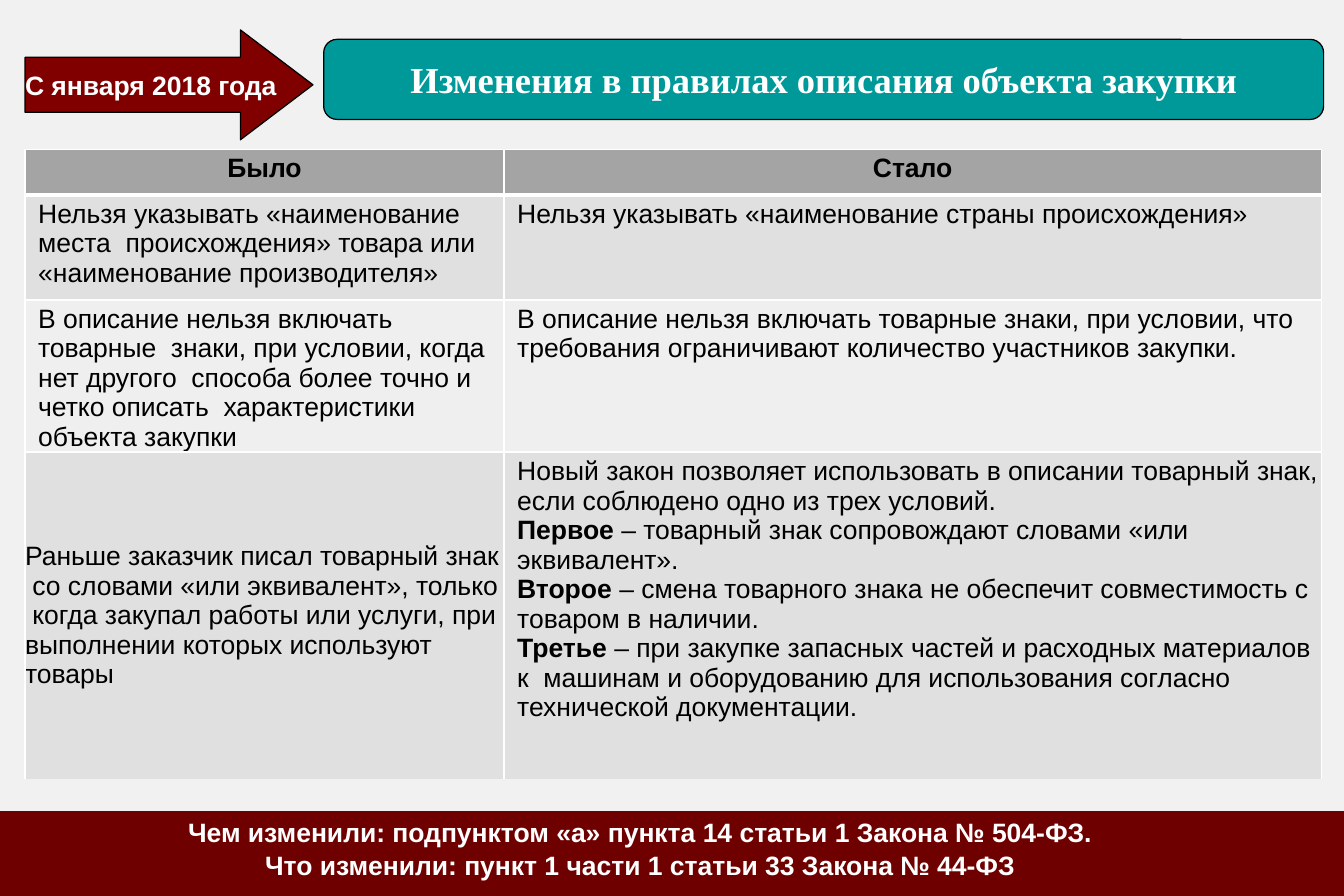
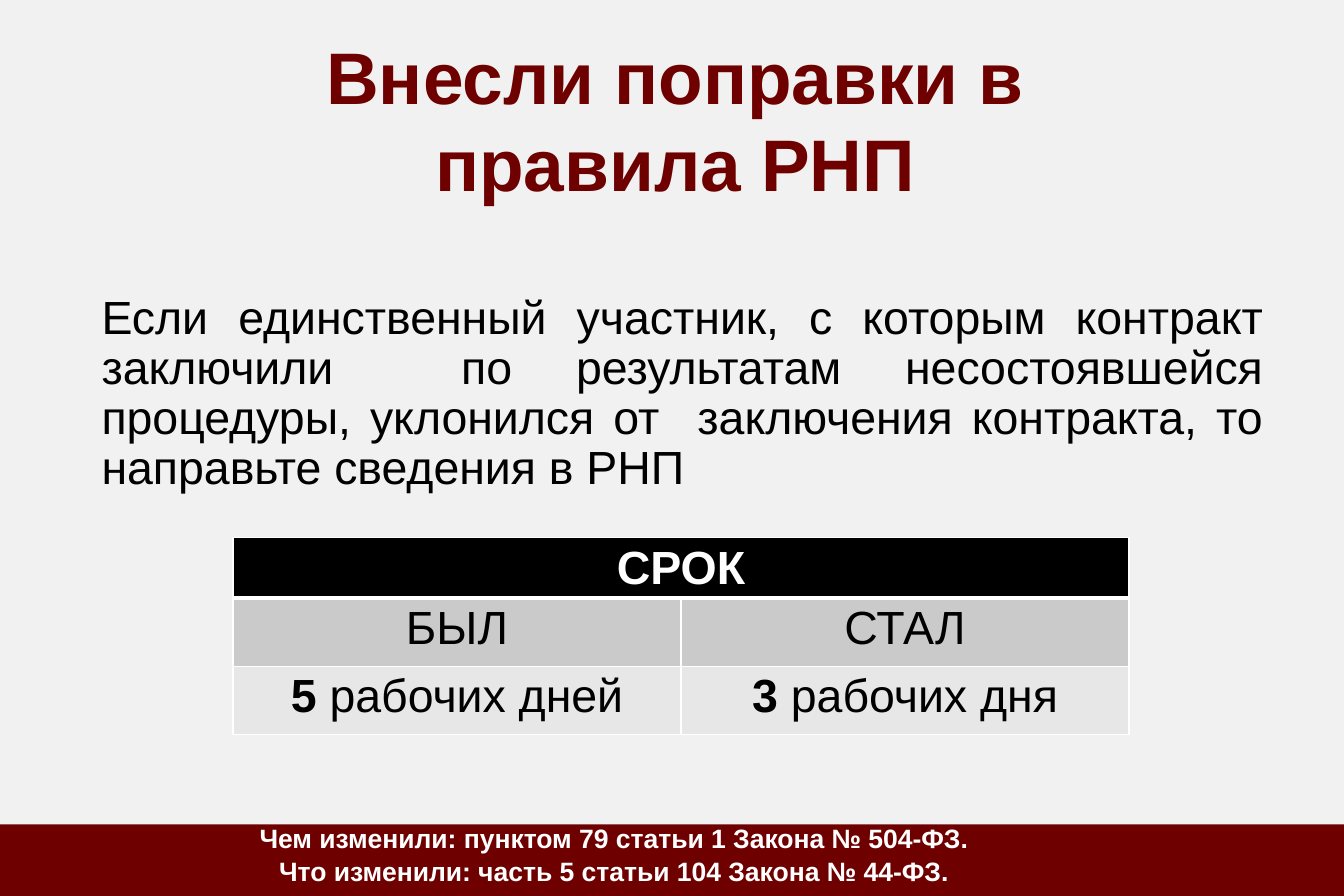
from dataclasses import dataclass
from typing import Optional

from pptx import Presentation
from pptx.dml.color import RGBColor
from pptx.enum.shapes import MSO_SHAPE as Preset
from pptx.enum.text import MSO_ANCHOR as Anchor, PP_ALIGN as Align
from pptx.oxml.ns import qn
from pptx.util import Inches, Pt
from lxml.etree import SubElement


@dataclass(frozen=True)
class Theme:
    page: str = "F1F1F1"
    band: str = "6F0000"
    arrow: str = "800000"
    teal: str = "009999"
    black: str = "000000"
    white: str = "FFFFFF"
    header: str = "A4A4A4"
    row_dark: str = "E0E0E0"
    row_light: str = "EFEFEF"
    term_dark: str = "CACACA"
    term_light: str = "E7E7E7"
    sans: str = "Arial"
    serif: str = "Times New Roman"
    small: float = 16
    banner: float = 22
    large: float = 28
    title: float = 44


THEME = Theme()
WIDTH, HEIGHT = 11.25, 7.5


@dataclass(frozen=True)
class Box:
    left: float
    top: float
    width: float
    height: float

    def lengths(self):
        return tuple(Inches(v) for v in (self.left, self.top, self.width, self.height))


@dataclass(frozen=True)
class Line:
    """One paragraph, with an optional bold opening."""
    text: str
    lead: str = ""


@dataclass(frozen=True)
class Cell:
    lines: tuple[Line, ...]
    left: float = 0
    top: float = 0.04


@dataclass(frozen=True)
class Row:
    height: float
    fill: str
    cells: tuple[Cell, ...]
    rule_below: float
    color: str = THEME.black
    bold: bool = False
    align: Align = Align.LEFT


def rgb(color: str) -> RGBColor:
    return RGBColor.from_string(color)


def write(frame, *lines: Line, size: float = THEME.small, font: str = THEME.sans,
          color: str = THEME.black, bold: bool = False, align: Align = Align.LEFT,
          before: float = 0, spacing: Optional[float] = None) -> None:
    for index, line in enumerate(lines):
        paragraph = frame.add_paragraph() if index else frame.paragraphs[0]
        paragraph.alignment = align
        paragraph.space_before = Pt(before)
        if spacing:
            paragraph.line_spacing = Pt(spacing)
        for text, is_bold in ((line.lead, True), (line.text, bold)):
            if text:
                run = paragraph.add_run()
                run.text = text
                run.font.size, run.font.name, run.font.bold = Pt(size), font, is_bold
                run.font.color.rgb = rgb(color)


def add_text(slide, box: Box, *lines: Line, inset_top: float = 0.01, **text_format) -> None:
    frame = slide.shapes.add_textbox(*box.lengths()).text_frame
    frame.word_wrap = True
    frame.margin_left = frame.margin_right = frame.margin_bottom = 0
    frame.margin_top = Inches(inset_top)
    write(frame, *lines, **text_format)


def add_preset(slide, preset: Preset, box: Box, fill: str, outline: Optional[str] = None):
    shape = slide.shapes.add_shape(preset, *box.lengths())
    shape.shadow.inherit = False
    shape.fill.solid()
    shape.fill.fore_color.rgb = rgb(fill)
    if outline:
        shape.line.color.rgb = rgb(outline)
        shape.line.width = Pt(0.75)
    else:
        shape.line.fill.background()
    return shape


def add_footer(slide, band_top: float, text_box: Box, *lines: Line) -> None:
    add_preset(slide, Preset.RECTANGLE, Box(0, band_top, WIDTH, HEIGHT - band_top), THEME.band)
    add_text(slide, text_box, *lines, color=THEME.white, bold=True, align=Align.CENTER, before=1)


def set_borders(cell, above: float, below: float) -> None:
    """Draw white cell edges; a width of zero hides the edge."""
    properties = cell._tc.get_or_add_tcPr()
    for position, (edge, width) in enumerate(
            (("a:lnL", 1), ("a:lnR", 1), ("a:lnT", above), ("a:lnB", below))):
        line = SubElement(properties, qn(edge), w=str(Pt(width)))
        if width:
            SubElement(SubElement(line, qn("a:solidFill")), qn("a:srgbClr"), val=THEME.white)
        else:
            SubElement(line, qn("a:noFill"))
        properties.insert(position, line)


def add_grid(slide, left: float, top: float, columns: tuple[float, ...],
             rows: tuple[Row, ...], size: float) -> None:
    """Add a table; a row with fewer cells than columns is merged across."""
    box = Box(left, top, sum(columns), sum(row.height for row in rows))
    table = slide.shapes.add_table(len(rows), len(columns), *box.lengths()).table
    table.first_row = table.horz_banding = False
    for column, width in zip(table.columns, columns):
        column.width = Inches(width)
    above = 1
    for index, row in enumerate(rows):
        table.rows[index].height = Inches(row.height)
        if len(row.cells) < len(columns):
            table.cell(index, 0).merge(table.cell(index, len(columns) - 1))
        for position in range(len(columns)):
            cell = table.cell(index, position)
            cell.fill.solid()
            cell.fill.fore_color.rgb = rgb(row.fill)
            set_borders(cell, above, row.rule_below)
        for position, content in enumerate(row.cells):
            cell = table.cell(index, position)
            cell.margin_left, cell.margin_top = Inches(content.left), Inches(content.top)
            cell.margin_right = cell.margin_bottom = 0
            write(cell.text_frame, *content.lines, size=size, color=row.color,
                  bold=row.bold, align=row.align)
        above = row.rule_below


def plain(text: str, left: float = 0.11, top: float = 0.04) -> Cell:
    return Cell((Line(text),), left, top)


def centred(*texts: str) -> tuple[Cell, ...]:
    return tuple(plain(text, left=0) for text in texts)


PURCHASE_ROWS = (
    Row(0.38, THEME.header, centred("Было", "Стало"), 3, bold=True, align=Align.CENTER),
    Row(0.88, THEME.row_dark, (
        plain("Нельзя указывать «наименование места  происхождения» товара или "
              "«наименование производителя»"),
        plain("Нельзя указывать «наименование страны происхождения»")), 1),
    Row(1.27, THEME.row_light, (
        plain("В описание нельзя включать товарные  знаки, при условии, когда нет другого  "
              "способа более точно и четко описать  характеристики объекта закупки"),
        plain("В описание нельзя включать товарные знаки, при условии, что "
              "требования ограничивают количество участников закупки.")), 1.5),
    Row(2.74, THEME.row_dark, (
        plain("Раньше заказчик писал товарный знак  со словами «или эквивалент», только  "
              "когда закупал работы или услуги, при  выполнении которых используют товары",
              left=0, top=0.75),
        Cell((
            Line("Новый закон позволяет использовать в описании товарный знак, "
                 "если соблюдено одно из трех условий."),
            Line("– товарный знак сопровождают словами «или  эквивалент».", "Первое "),
            Line("– смена товарного знака не обеспечит совместимость с товаром в наличии.",
                 "Второе "),
            Line("– при закупке запасных частей и расходных материалов к  машинам и "
                 "оборудованию для использования согласно технической документации.",
                 "Третье "),
        ), left=0.11)), 0),
)

TERM_ROWS = (
    Row(0.5, THEME.black, centred("СРОК"), 3, THEME.white, True, Align.CENTER),
    Row(0.57, THEME.term_dark, centred("БЫЛ", "СТАЛ"), 1, align=Align.CENTER),
    Row(0.57, THEME.term_light, (
        Cell((Line("рабочих дней", "5 "),)),
        Cell((Line("рабочих дня", "3 "),))), 1, align=Align.CENTER),
)


def build_purchase_slide(slide) -> None:
    add_grid(slide, 0.21, 1.25, (4.01, 6.84), PURCHASE_ROWS, THEME.small)
    add_footer(slide, 6.79, Box(1.48, 6.82, 7.76, 0.56),
               Line("Чем изменили: подпунктом «а» пункта 14 статьи 1 Закона № 504-ФЗ."),
               Line("Что изменили: пункт 1 части 1 статьи 33 Закона № 44-ФЗ"))
    banner = add_preset(slide, Preset.ROUNDED_RECTANGLE, Box(2.71, 0.33, 8.37, 0.67),
                        THEME.teal, THEME.black)
    arrow = add_preset(slide, Preset.RIGHT_ARROW, Box(0.21, 0.25, 2.41, 0.92),
                       THEME.arrow, THEME.black)
    arrow.adjustments[1] = 0.66
    arrow.text_frame.word_wrap = False
    for shape, text, size, font in (
            (banner, "Изменения в правилах описания объекта закупки", THEME.banner, THEME.serif),
            (arrow, "С января 2018 года", THEME.small, THEME.sans)):
        shape.text_frame.vertical_anchor = Anchor.MIDDLE
        write(shape.text_frame, Line(text), size=size, font=font, color=THEME.white,
              bold=True, align=Align.CENTER)


def build_register_slide(slide) -> None:
    add_text(slide, Box(1.41, 0.25, 8.49, 1.48), Line("Внесли поправки в правила РНП"),
             size=THEME.title, color=THEME.band, bold=True, align=Align.CENTER)
    add_text(slide, Box(0.85, 2.39, 9.72, 1.34),
             Line("Если единственный участник, с которым контракт заключили  по результатам "
                  "несостоявшейся процедуры, уклонился от  заключения контракта, то "
                  "направьте сведения в РНП"),
             inset_top=0.07, size=THEME.large, align=Align.JUSTIFY, spacing=30.2)
    add_footer(slide, 6.9, Box(1.2, 6.87, 7.88, 0.56),
               Line("Чем изменили: пунктом 79 статьи 1 Закона № 504-ФЗ."),
               Line("Что изменили: часть 5 статьи 104 Закона № 44-ФЗ."))
    add_grid(slide, 1.95, 4.5, (3.75, 3.75), TERM_ROWS, THEME.large)


def main() -> None:
    presentation = Presentation()
    presentation.slide_width, presentation.slide_height = Inches(WIDTH), Inches(HEIGHT)
    background = presentation.slide_master.background.fill
    background.solid()
    background.fore_color.rgb = rgb(THEME.page)
    blank_layout = presentation.slide_layouts[6]
    for build in (build_purchase_slide, build_register_slide):
        build(presentation.slides.add_slide(blank_layout))
    presentation.save("out.pptx")


if __name__ == "__main__":
    main()
